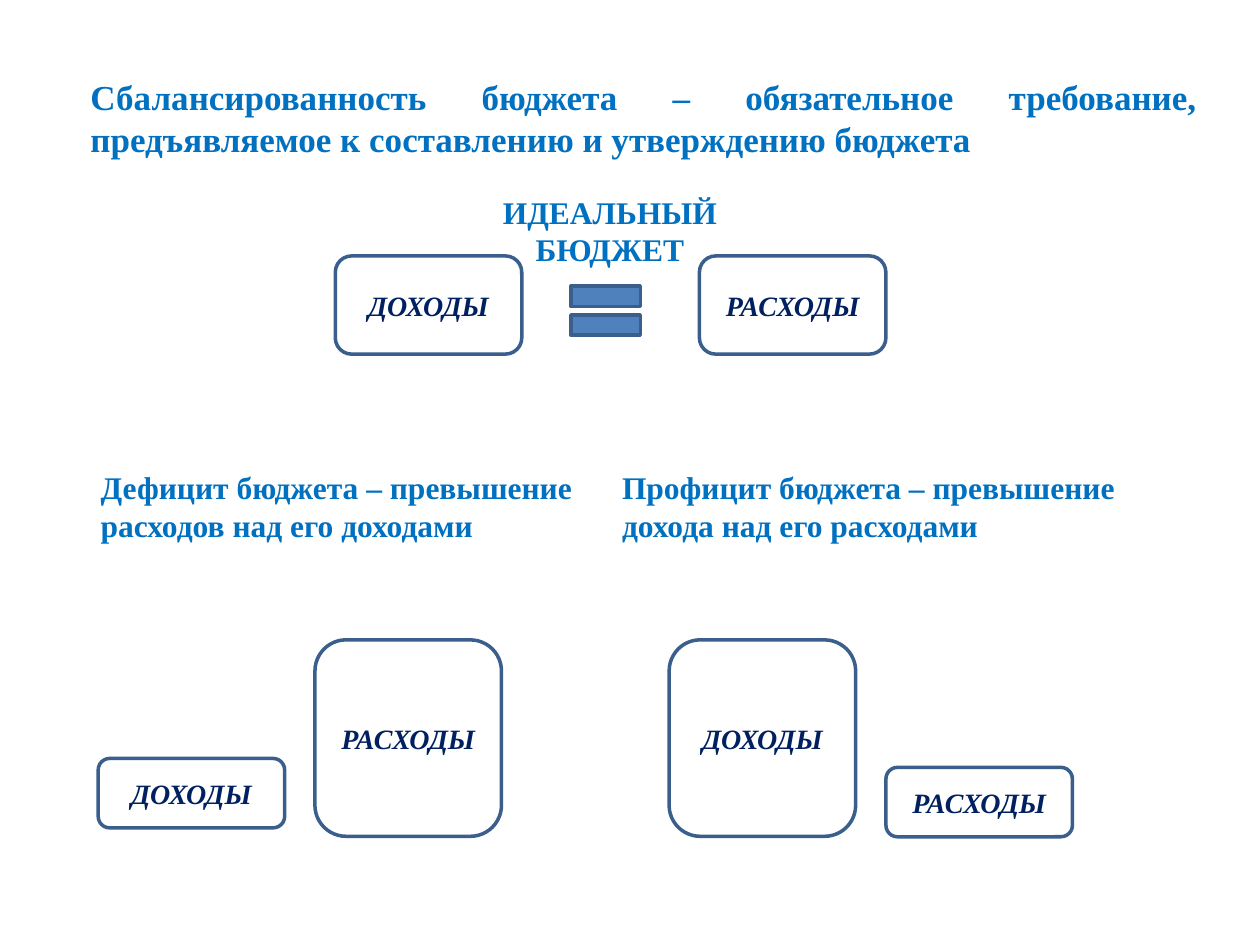
from pptx import Presentation
from pptx.dml.color import RGBColor
from pptx.enum.shapes import MSO_SHAPE as Shape
from pptx.enum.text import MSO_ANCHOR as Anchor, MSO_AUTO_SIZE as AutoSize, PP_ALIGN as Align
from pptx.util import Cm, Pt

COLORS = {
    "heading": "0070C0",
    "label": "002060",
    "outline": "3A5F8C",
    "bar": "4F81BD",
    "white": "FFFFFF",
}
FONT = "Times New Roman"
BOX_WIDTH = 3.76
INCOME, EXPENSES = "ДОХОДЫ", "РАСХОДЫ"


def color(name):
    return RGBColor.from_string(COLORS[name])


def write(frame, text, size, color_name, align, anchor, italic=False):
    frame.text = text
    frame.word_wrap = True
    frame.vertical_anchor = anchor
    paragraph = frame.paragraphs[0]
    paragraph.alignment = align
    for span in paragraph.runs:
        span.font.name = FONT
        span.font.size = Pt(size)
        span.font.bold = True
        span.font.italic = italic
        span.font.color.rgb = color(color_name)


def set_title(page, text, left, top, width, height):
    title = page.shapes.title
    title.left, title.top = Cm(left), Cm(top)
    title.width, title.height = Cm(width), Cm(height)
    write(title.text_frame, text, 20, "heading", Align.JUSTIFY, Anchor.TOP)
    title.text_frame.auto_size = AutoSize.SHAPE_TO_FIT_TEXT


def add_caption(page, text, left, top, width, align=Align.LEFT):
    box = page.shapes.add_textbox(Cm(left), Cm(top), Cm(width), Cm(1.8))
    write(box.text_frame, text, 18, "heading", align, Anchor.TOP)
    box.text_frame.auto_size = AutoSize.SHAPE_TO_FIT_TEXT


def add_block(page, kind, fill, left, top, width, height):
    block = page.shapes.add_shape(kind, Cm(left), Cm(top), Cm(width), Cm(height))
    block.shadow.inherit = False
    block.fill.solid()
    block.fill.fore_color.rgb = color(fill)
    block.line.color.rgb = color("outline")
    block.line.width = Pt(2)
    return block


def add_budget_box(page, text, left, top, height):
    box = add_block(page, Shape.ROUNDED_RECTANGLE, "white", left, top, BOX_WIDTH, height)
    write(box.text_frame, text, 16, "label", Align.CENTER, Anchor.MIDDLE, italic=True)


def main():
    deck = Presentation()
    deck.slide_width, deck.slide_height = Cm(25.4), Cm(19.05)
    page = deck.slides.add_slide(deck.slide_layouts[5])

    set_title(page, "Сбалансированность бюджета – обязательное требование, "
              "предъявляемое к составлению и утверждению бюджета", 1.57, 1.4, 22.81, 1.96)

    # Balanced budget: income equals expenses
    add_budget_box(page, INCOME, 6.76, 5.16, 1.98)
    add_budget_box(page, EXPENSES, 14.1, 5.16, 1.98)
    for top in (5.77, 6.35):
        add_block(page, Shape.RECTANGLE, "bar", 11.51, top, 1.4, 0.41)
    add_caption(page, "ИДЕАЛЬНЫЙ БЮДЖЕТ", 9.12, 3.76, 6.35, Align.CENTER)

    # Deficit: expenses exceed income
    add_caption(page, "Дефицит бюджета – превышение расходов над его доходами",
                1.78, 9.32, 10.31)
    add_budget_box(page, INCOME, 1.98, 15.29, 1.4)
    add_budget_box(page, EXPENSES, 6.35, 12.9, 3.96)

    # Surplus: income exceeds expenses
    add_caption(page, "Профицит бюджета – превышение дохода над его расходами",
                12.29, 9.32, 11.3)
    add_budget_box(page, INCOME, 13.49, 12.9, 3.96)
    add_budget_box(page, EXPENSES, 17.86, 15.47, 1.4)

    deck.save("out.pptx")


if __name__ == "__main__":
    main()
